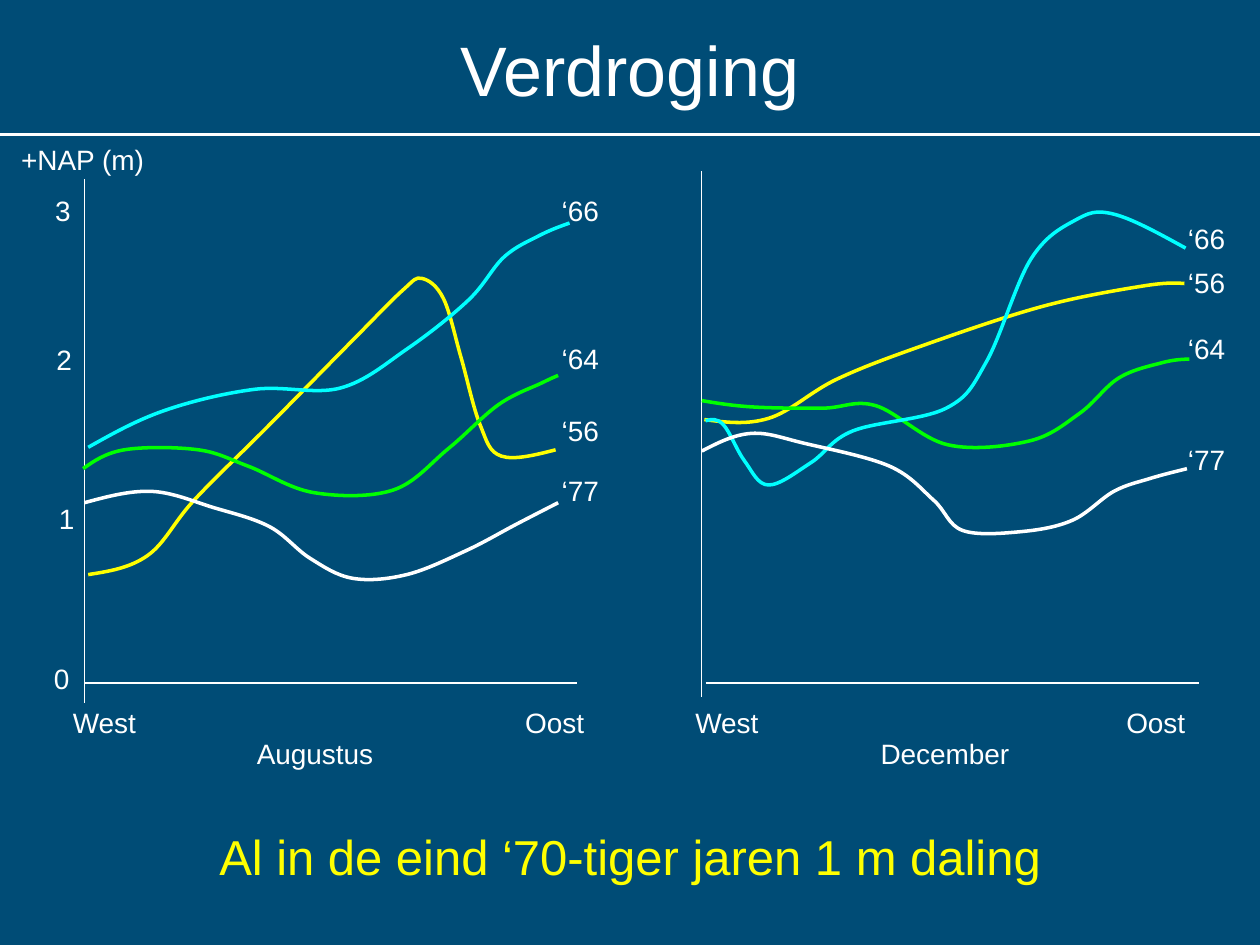
from pptx import Presentation
from pptx.dml.color import RGBColor
from pptx.enum.shapes import MSO_CONNECTOR
from pptx.enum.text import MSO_ANCHOR, MSO_AUTO_SIZE, PP_ALIGN
from pptx.oxml.ns import qn
from pptx.oxml.xmlchemy import OxmlElement
from pptx.util import Pt

PX = 9144  # 100 px to the inch
FONT = "Arial"
BLUE, WHITE, YELLOW, CYAN, GREEN = "004C76", "FFFFFF", "FFFF00", "00FFFF", "00FF00"
LABEL_HEIGHT, YEAR_WIDTH = 37, 50

# Places are relative to each panel's box; curves are the knots they pass through
AUGUSTUS = {
    "month": ("Augustus", 127, 114), "west": -19, "oost": 340,
    "height_axis": (6, 422), "distance_axis": (0, 391),
    "curves": [
        (YELLOW, [(3, 320), (50, 305), (87, 261), (146, 202), (212, 135), (253, 94),
                  (268, 85), (285, 101), (299, 148), (314, 201), (331, 226), (374, 221)]),
        (CYAN, [(3, 219), (63, 190), (135, 173), (203, 172), (256, 141), (305, 102),
                (333, 68), (361, 51), (385, 41)]),
        (GREEN, [(-1, 236), (32, 221), (90, 221), (130, 234), (182, 255), (245, 253),
                 (289, 220), (329, 185), (363, 168), (376, 162)]),
        (WHITE, [(0, 263), (53, 254), (103, 267), (147, 282), (179, 307), (213, 323),
                 (256, 320), (303, 301), (343, 280), (376, 263)]),
    ],
    "year_left": 369,
    "years": [("‘66", 13), ("‘64", 130), ("‘56", 187), ("‘77", 235)],
}
DECEMBER = {
    "month": ("December", 132, 124), "west": -15, "oost": 327,
    "height_axis": (0, 417), "distance_axis": (3, 395),
    "curves": [
        (YELLOW, [(2, 197), (53, 196), (107, 165), (176, 138), (271, 107), (350, 91),
                  (383, 89)]),
        (GREEN, [(0, 182), (40, 187), (96, 188), (138, 186), (195, 217), (260, 214),
                 (300, 192), (331, 164), (365, 152), (387, 149)]),
        (CYAN, [(3, 198), (17, 201), (34, 230), (53, 249), (87, 231), (120, 206),
                (194, 188), (226, 151), (261, 70), (296, 39), (327, 34), (384, 61)]),
        (WHITE, [(0, 222), (39, 208), (82, 216), (149, 234), (184, 261), (207, 285),
                 (253, 286), (294, 277), (327, 254), (355, 244), (385, 236)]),
    ],
    "year_left": 376,
    "years": [("‘66", 35), ("‘56", 70), ("‘64", 122), ("‘77", 210)],
}


def px(length):
    return round(length * PX)


def color(value):
    return RGBColor.from_string(value)


def write(frame, text, size, fill, align):
    frame.text = text
    para = frame.paragraphs[0]
    para.alignment = align
    para.font.size = Pt(size)
    para.font.name = FONT
    para.font.color.rgb = color(fill)


def add_label(page, text, left, top, width):
    box = page.shapes.add_textbox(px(left), px(top), px(width), px(LABEL_HEIGHT))
    box.text_frame.word_wrap = False
    box.text_frame.auto_size = MSO_AUTO_SIZE.SHAPE_TO_FIT_TEXT
    write(box.text_frame, text, 16, WHITE, PP_ALIGN.LEFT)


def add_rule(page, x1, y1, x2, y2, width):
    rule = page.shapes.add_connector(MSO_CONNECTOR.STRAIGHT, px(x1), px(y1), px(x2), px(y2))
    rule.line.color.rgb = color(WHITE)
    rule.line.width = Pt(width)
    rule.element.spPr.append(OxmlElement("a:effectLst"))


def bezier_points(knots):
    """Two controls and an end for each span, with tangents along the neighbours."""
    last = len(knots) - 1

    def control(index, sign):
        before, knot, after = knots[index - 1], knots[index], knots[index + 1]
        return tuple(k + sign * (a - b) / 6 for b, k, a in zip(before, knot, after))

    def midpoint(first, second):
        return tuple((a + b) / 2 for a, b in zip(first, second))

    points = []
    for i in range(last):
        leaving = control(i, 1) if i > 0 else None
        arriving = control(i + 1, -1) if i + 1 < last else None
        points += [leaving or midpoint(knots[i], arriving),
                   arriving or midpoint(leaving, knots[i + 1]), knots[i + 1]]
    return points


def add_curve(page, left, top, knots, stroke):
    def place(point):
        return px(left + point[0]), px(top + point[1])

    builder = page.shapes.build_freeform(*place(knots[0]))
    builder.add_line_segments([place(p) for p in bezier_points(knots)], close=False)
    curve = builder.convert_to_shape()
    curve.fill.background()
    curve.line.color.rgb = color(stroke)
    curve.line.width = Pt(2)
    curve.shadow.inherit = False
    # Join every three segments into one cubic Bezier
    outline = next(curve.element.iter(qn("a:path")))
    segments = list(outline)[1:]
    for i in range(0, len(segments), 3):
        cubic = OxmlElement("a:cubicBezTo")
        for segment in segments[i:i + 3]:
            cubic.append(segment[0])
            outline.remove(segment)
        outline.append(cubic)


def add_panel(page, left, top, panel):
    # Axes
    start, end = panel["height_axis"]
    add_rule(page, left, top + start, left, top + end, 0.75)
    start, end = panel["distance_axis"]
    add_rule(page, left + start, top + 406, left + end, top + 406, 0.75)
    # Curves and their years
    for stroke, knots in panel["curves"]:
        add_curve(page, left, top, knots, stroke)
    for year, offset in panel["years"]:
        add_label(page, year, left + panel["year_left"], top + offset, YEAR_WIDTH)
    # Captions below the axis
    add_label(page, "West", left + panel["west"], top + 419, 71)
    add_label(page, "Oost", left + panel["oost"], top + 419, 68)
    month, offset, width = panel["month"]
    add_label(page, month, left + offset, top + 444, width)


def add_height_scale(page, left, top):
    add_label(page, "+NAP (m)", left, top, 119)
    for text, dx, dy in [("3", 27, 41), ("2", 28, 159), ("1", 30, 285), ("0", 26, 412)]:
        add_label(page, text, left + dx, top + dy, 33)


def add_heading(page, left, top, width, height):
    title = page.shapes.title
    title.left, title.top, title.width, title.height = map(px, (left, top, width, height))
    title.text_frame.vertical_anchor = MSO_ANCHOR.MIDDLE
    write(title.text_frame, "Verdroging", 40, WHITE, PP_ALIGN.CENTER)
    add_rule(page, left, top + 99, left + width, top + 99, 1.5)


def add_conclusion(page, left, top, width, height):
    box = page.shapes.add_textbox(px(left), px(top), px(width), px(height))
    box.text_frame.word_wrap = True
    box.text_frame.vertical_anchor = MSO_ANCHOR.MIDDLE
    write(box.text_frame, "Al in de eind ‘70-tiger jaren 1 m daling", 28, YELLOW,
          PP_ALIGN.CENTER)


def main():
    deck = Presentation()
    deck.slide_width, deck.slide_height = px(1000), px(750)
    page = deck.slides.add_slide(deck.slide_layouts.get_by_name("Title Only"))
    page.background.fill.solid()
    page.background.fill.fore_color.rgb = color(BLUE)

    add_heading(page, 0, 8, 1000, 92)
    add_panel(page, 67, 136, AUGUSTUS)
    add_panel(page, 557, 136, DECEMBER)
    add_height_scale(page, 7, 108)
    add_conclusion(page, 0, 633, 1000, 92)
    deck.save("out.pptx")


if __name__ == "__main__":
    main()
